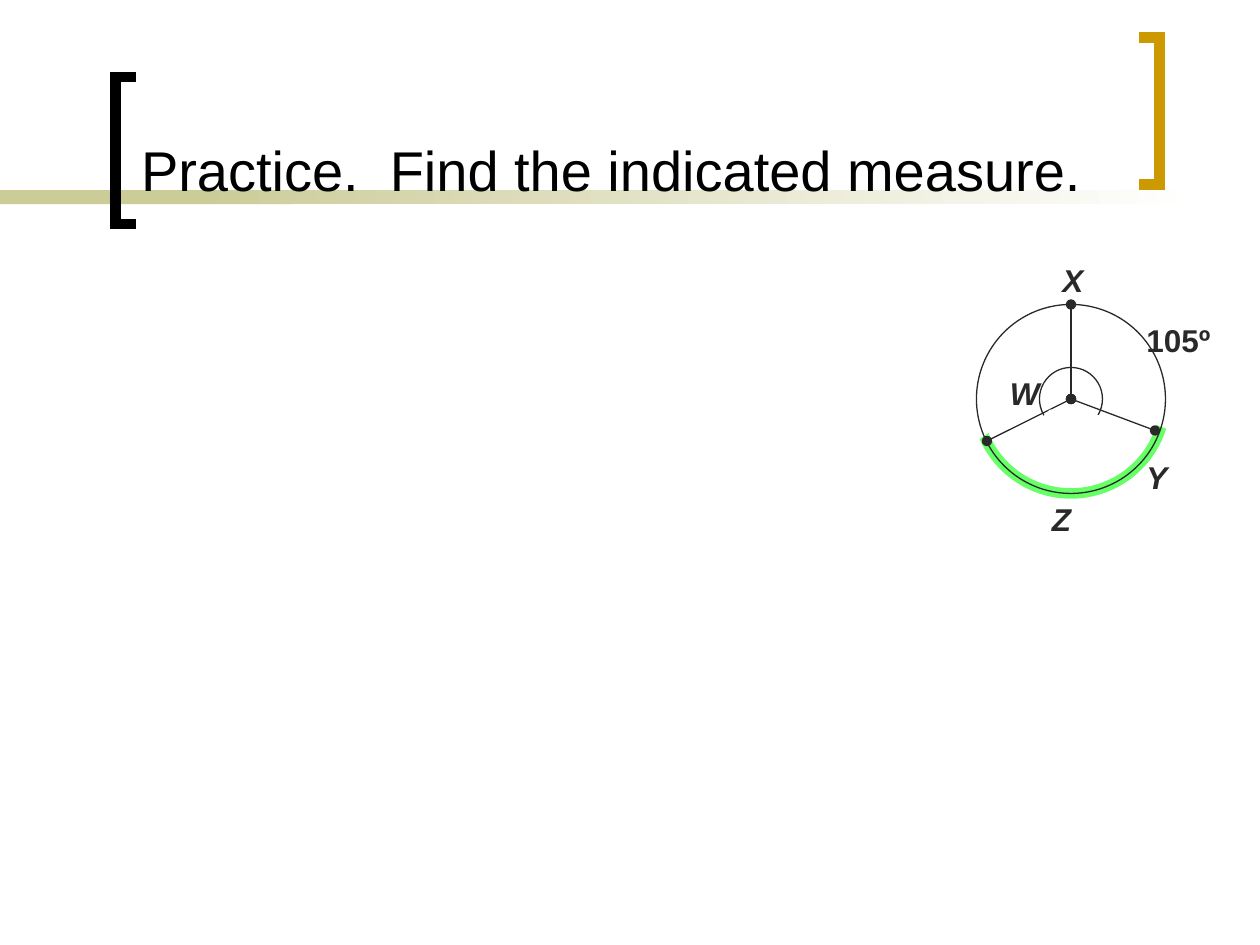
from lxml import etree
from pptx import Presentation
from pptx import util as u
from pptx.dml import color
from pptx.enum import shapes, text
from pptx.oxml import ns

COLORS = {
    "band": "CCCC99",
    "white": "FFFFFF",
    "black": "000000",
    "gold": "CC9900",
    "green": "66FF66",
    "ink": "292929",
}
CENTER = (612, 228)
RADIUS = 54
ANGLE_RADIUS = 18


def rgb(name):
    return color.RGBColor.from_string(COLORS[name])


def points(*values):
    return [u.Pt(value) for value in values]


def style_shape(shape, fill=None, line=None, weight=0.75):
    shape.shadow.inherit = False
    if fill:
        shape.fill.solid()
        shape.fill.fore_color.rgb = rgb(fill)
    else:
        shape.fill.background()
    if line:
        shape.line.color.rgb = rgb(line)
        shape.line.width = u.Pt(weight)
    else:
        shape.line.fill.background()


def add_band(page, left, width, fade=False):
    band = page.shapes.add_shape(
        shapes.MSO_SHAPE.RECTANGLE, *points(left, 108.75, width, 8))
    style_shape(band, "band")
    if fade:
        band.fill.gradient()
        band.fill.gradient_angle = 0
        for stop, name in zip(band.fill.gradient_stops, ("band", "white")):
            stop.color.rgb = rgb(name)


def add_outline(page, corners, close):
    start, *others = [points(*corner) for corner in corners]
    builder = page.shapes.build_freeform(*start, scale=1.0)
    builder.add_line_segments(others, close=close)
    return builder.convert_to_shape()


def add_bracket(page, spine, tip, top, name):
    bottom = top + 84
    corners = [(tip, top), (spine, top), (spine, bottom), (tip, bottom)]
    bracket = add_outline(page, corners, False)
    style_shape(bracket, line=name, weight=6)
    line = bracket.line._get_or_add_ln()
    etree.SubElement(line, ns.qn("a:miter"), lim="800000")


def add_mask(page, corners):
    style_shape(add_outline(page, corners, True), "white")


def add_circle(page, radius, name, weight=0.75):
    x, y = CENTER
    circle = page.shapes.add_shape(
        shapes.MSO_SHAPE.OVAL,
        *points(x - radius, y - radius, 2 * radius, 2 * radius))
    style_shape(circle, line=name, weight=weight)


def add_radius(page, end):
    radius = page.shapes.add_connector(
        shapes.MSO_CONNECTOR.STRAIGHT, *points(*CENTER, *end))
    radius.line.color.rgb = rgb("ink")
    radius.line.width = u.Pt(0.75)
    line = radius.line._get_or_add_ln()
    for tag in ("a:headEnd", "a:tailEnd"):
        etree.SubElement(line, ns.qn(tag), type="oval")
    etree.SubElement(radius._element.spPr, ns.qn("a:effectLst"))


def add_text(page, words, frame, size, name, bold=False, italic=False,
             anchor=text.MSO_ANCHOR.TOP):
    box = page.shapes.add_textbox(*points(*frame))
    box.text_frame.word_wrap = True
    box.text_frame.vertical_anchor = anchor
    box.text_frame.text = words
    font = box.text_frame.paragraphs[0].runs[0].font
    font.name = "Arial"
    font.size = u.Pt(size)
    font.bold = bold
    font.italic = italic
    font.color.rgb = rgb(name)


def add_label(page, words, left, top, width=42, italic=True):
    add_text(page, words, (left, top, width, 29), 18, "ink", True, italic)


def main():
    deck = Presentation()
    deck.slide_width, deck.slide_height = points(720, 540)
    page = deck.slides.add_slide(deck.slide_layouts[6])

    add_band(page, 0, 168)
    add_band(page, 114, 570, fade=True)
    add_bracket(page, 66, 78, 44, "black")
    add_bracket(page, 662.5, 651, 21.5, "gold")

    add_circle(page, RADIUS, "green", 6)
    add_mask(page, [(576, 240), (558, 252), (546, 180), (588, 168), (636, 168),
                    (702, 228), (684, 252), (654, 240), (642, 222), (612, 204)])
    add_text(page, "Practice.  Find the indicated measure.",
             (73.5, 8, 564, 111.5), 32, "black",
             anchor=text.MSO_ANCHOR.BOTTOM)

    add_circle(page, RADIUS, "ink")
    for letter, left, top in (("X", 600, 145.5), ("Y", 648, 258),
                              ("Z", 594, 282), ("W", 570, 210)):
        add_label(page, letter, left, top)
    for end in ((612, 174), (564, 252), (660, 246)):
        add_radius(page, end)
    add_circle(page, ANGLE_RADIUS, "ink")
    add_mask(page, [(588, 246), (600, 234), (618, 234), (636, 240), (618, 258)])
    add_label(page, "105º", 648, 180, width=54, italic=False)

    deck.save("out.pptx")


if __name__ == "__main__":
    main()
